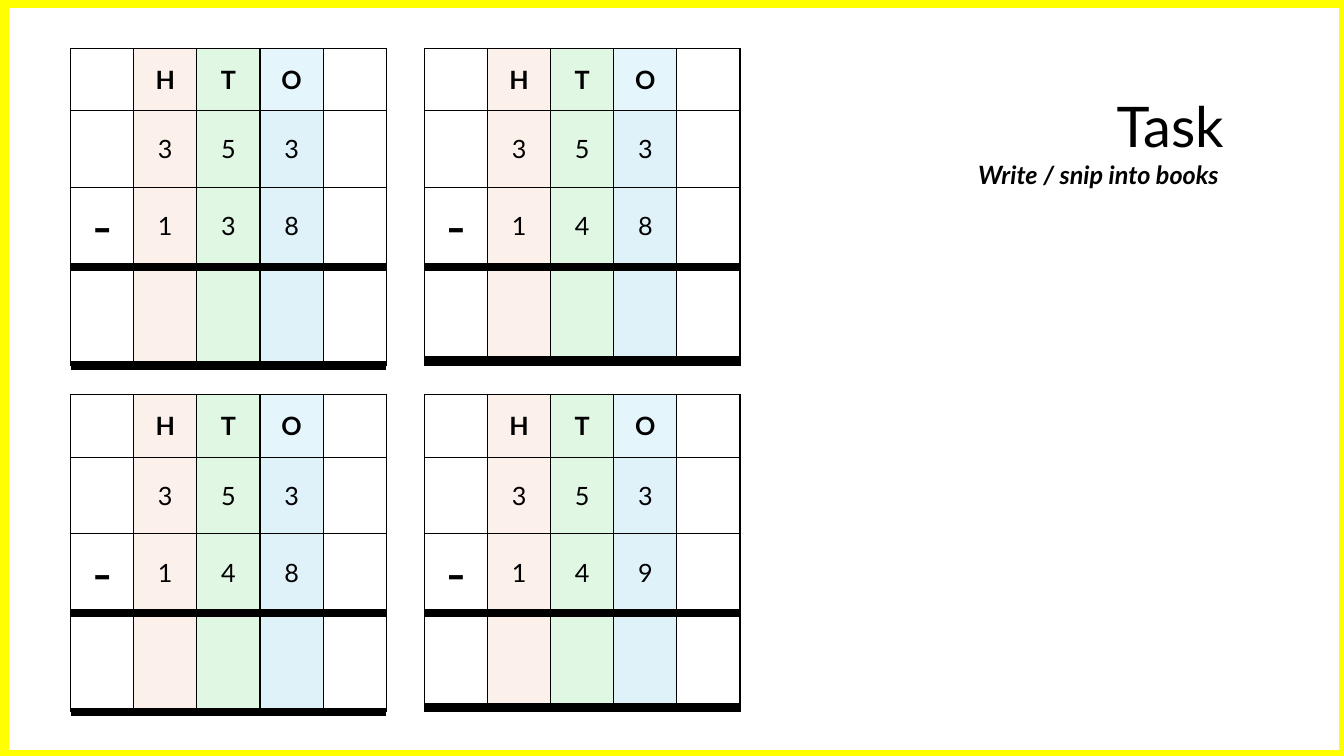
from pptx import Presentation
from pptx.dml.color import RGBColor
from pptx.enum.shapes import MSO_CONNECTOR as CONN, MSO_SHAPE as SHAPE
from pptx.enum.text import MSO_ANCHOR as ANCHOR, MSO_AUTO_SIZE as AUTO, PP_ALIGN as ALIGN
from pptx.oxml import parse_xml
from pptx.oxml.ns import nsdecls
from pptx.oxml.xmlchemy import OxmlElement
from pptx.util import Pt

COLORS = {
    "black": "000000", "frame": "FFFF00", "hundreds": "FBE3D6",
    "tens": "C2F1C8", "ones": "C1E5F5", "ones_head": "CAEEFB",
}


def rgb(name):
    return RGBColor.from_string(COLORS[name])


def write(tf, text, size=18, bold=False, italic=False, align=ALIGN.CENTER):
    p = tf.paragraphs[0]
    p.alignment = align
    r = p.add_run()
    r.text = text
    r.font.name = "Lato"
    r.font.size = Pt(size)
    r.font.bold = bold
    r.font.italic = italic
    r.font.color.rgb = rgb("black")


prs = Presentation()
prs.slide_width, prs.slide_height = Pt(960), Pt(540)
s = prs.slides.add_slide(prs.slide_layouts[6])

headings = [
    ("Task", (789.8, 61.9, 91.4, 55.4), dict(size=40)),
    ("Write / snip into books", (679, 110.2, 198.7, 28.8), dict(bold=True, italic=True)),
]
for text, box, style in headings:
    tf = s.shapes.add_textbox(*map(Pt, box)).text_frame
    tf.word_wrap = False
    tf.auto_size = AUTO.SHAPE_TO_FIT_TEXT
    write(tf, text, align=ALIGN.RIGHT, **style)

sp = s.shapes.add_shape(SHAPE.RECTANGLE, Pt(1.4), Pt(0.7), Pt(960), Pt(540))
sp.shadow.inherit = False
sp.fill.background()
sp.line.color.rgb = rgb("frame")
sp.line.width = Pt(10)

GRID_W, GRID_H = 225.5, 226.5
ROW_HEIGHTS = [44.6, 54.7, 50.4, 72]
COLUMN_FILLS = [None, "hundreds", "tens", "ones", None]
sums = [
    (50.4, 34.6, "138", 226.5),
    (303.1, 34.6, "148", 223),
    (50.4, 282, "148", 226.5),
    (303.1, 282, "149", 223),
]

for left, top, subtrahend, bottom_rule in sums:
    table = s.shapes.add_table(4, 5, Pt(left), Pt(top), Pt(GRID_W), Pt(GRID_H)).table
    table.first_row = table.horz_banding = False
    for column in table.columns:
        column.width = Pt(GRID_W / 5)
    for row, height in zip(table.rows, ROW_HEIGHTS):
        row.height = Pt(height)

    rows = [" HTO ", " 353 ", f"-{subtrahend} ", " " * 5]
    for i, symbols in enumerate(rows):
        for j, symbol in enumerate(symbols):
            cell = table.cell(i, j)
            fill = COLUMN_FILLS[j]
            if fill:
                cell.fill.solid()
                cell.fill.fore_color.rgb = rgb("ones_head" if (i, j) == (0, 3) else fill)
                alpha = OxmlElement("a:alpha")
                alpha.set("val", "50000")
                cell._tc.tcPr.find(".//{*}srgbClr").append(alpha)
            else:
                cell.fill.background()
            for k, side in enumerate("LRTB"):
                cell._tc.tcPr.insert(k, parse_xml(
                    f'<a:ln{side} {nsdecls("a")} w="12700"><a:solidFill>'
                    f'<a:srgbClr val="{COLORS["black"]}"/></a:solidFill></a:ln{side}>'))
            if symbol != " ":
                cell.vertical_anchor = ANCHOR.MIDDLE
                write(cell.text_frame, symbol, size=40 if symbol == "-" else 18, bold=i == 0)

    for offset in (156, bottom_rule):
        y = Pt(top + offset)
        rule = s.shapes.add_connector(CONN.STRAIGHT, Pt(left), y, Pt(left + GRID_W), y)
        rule.line.color.rgb = rgb("black")
        rule.line.width = Pt(6)
        rule._element.spPr.append(OxmlElement("a:effectLst"))

prs.save("out.pptx")
